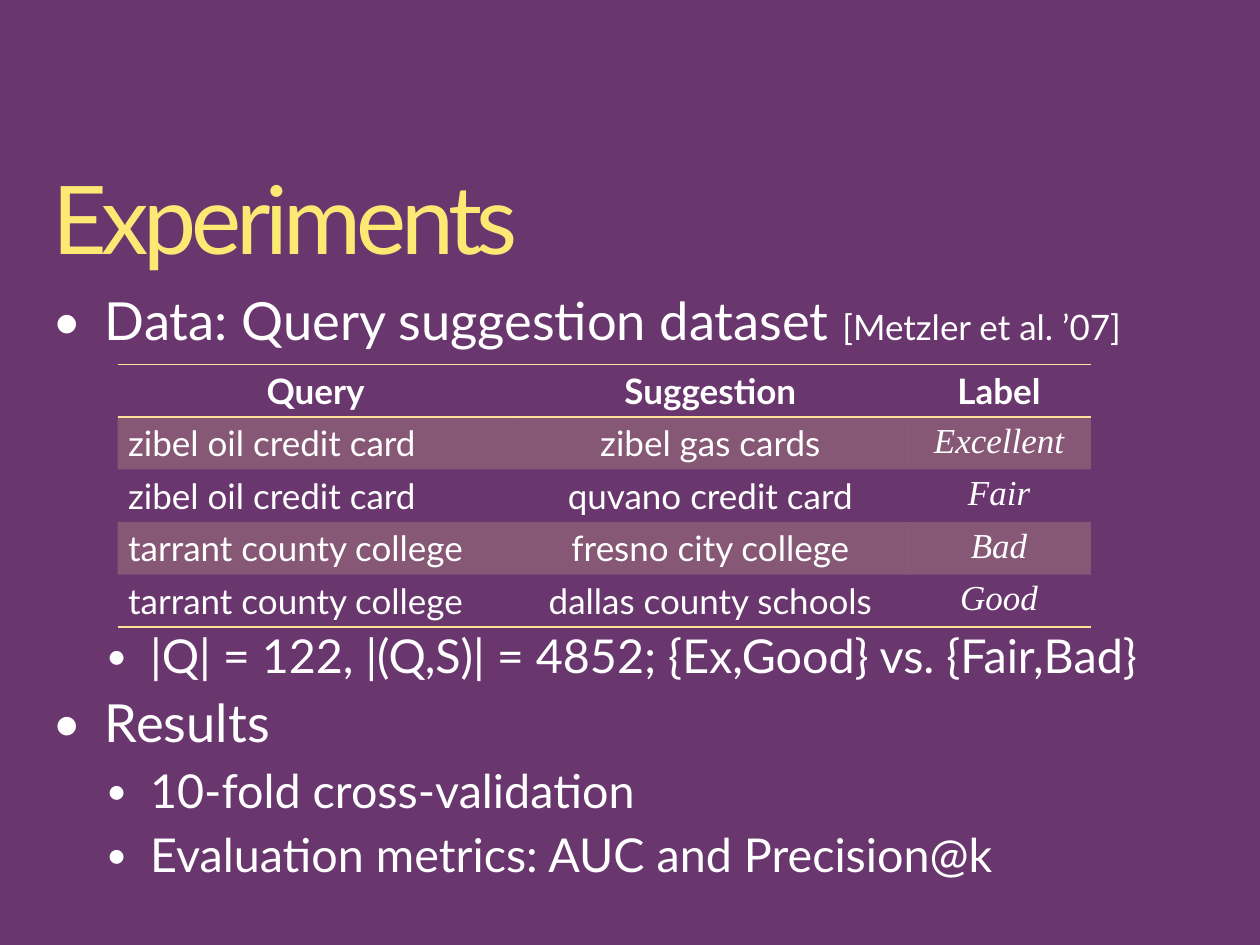
"""Build the Experiments slide: title, data bullet, query table and results."""
from dataclasses import dataclass

from lxml.etree import SubElement
from pptx import Presentation
from pptx.dml.color import RGBColor as Rgb
from pptx.enum.text import PP_ALIGN as Align
from pptx.oxml import parse_xml
from pptx.oxml.ns import nsdecls, qn
from pptx.util import Inches, Pt

COLORS = {"plum": "6A366E", "title": "FCE974", "gold": "FDE399", "white": "FFFFFF"}
PLAIN_TABLE = "{2D5ABB26-0587-4C30-8999-92F81FD0307C}"
SPACING = {"line_spacing": 0.9, "space_before": Pt(9.5)}


@dataclass(frozen=True)
class Span:
    text: str
    size: float
    color: str = "white"
    font: str = "Lato"
    bold: bool = False
    italic: bool = False


@dataclass(frozen=True)
class Level:
    margin: float
    hang: float
    bullet_percent: int


@dataclass(frozen=True)
class Line:
    spans: tuple[Span, ...]
    level: Level | None = None


@dataclass(frozen=True)
class Block:
    top: float
    height: float
    lines: tuple[Line, ...]


TOPIC = Level(0.5, 0.5, 95)
DETAIL = Level(0.93, 0.42, 80)
TITLE = Span("Experiments", 65, "title")
BLOCKS = (
    Block(1.64, 0.98, (Line((TITLE,)),)),
    Block(2.81, 0.6, (
        Line((Span("Data: Query suggestion dataset ", 36),
              Span("[Metzler et al. ’07]", 24)), TOPIC),
    )),
    Block(6.03, 2.66, (
        Line((Span("|Q| = 122, |(Q,S)| = 4852; {Ex,Good} vs. {Fair,Bad}", 32),), DETAIL),
        Line((Span("Results", 36),), TOPIC),
        Line((Span("10-fold cross-validation", 32),), DETAIL),
        Line((Span("Evaluation metrics: AUC and Precision@k", 32),), DETAIL),
    )),
)
COLUMN_WIDTHS = (3.77, 3.75, 1.75)
ROW_HEIGHT = 0.5
QUERIES = (
    ("Query", "Suggestion", "Label"),
    ("zibel oil credit card", "zibel gas cards", "Excellent"),
    ("zibel oil credit card", "quvano credit card", "Fair"),
    ("tarrant county college", "fresno city college", "Bad"),
    ("tarrant county college", "dallas county schools", "Good"),
)


def rgb(name: str) -> Rgb:
    return Rgb.from_string(COLORS[name])


def apply(target, values: dict) -> None:
    for name, value in values.items():
        setattr(target, name, value)


def add_span(paragraph, span: Span):
    run = paragraph.add_run()
    run.text = span.text
    apply(run.font, {"name": span.font, "size": Pt(span.size),
                     "bold": span.bold, "italic": span.italic})
    run.font.color.rgb = rgb(span.color)
    return run


def add_bullet(paragraph, level: Level) -> None:
    properties = paragraph._p.get_or_add_pPr()
    properties.set("marL", str(Inches(level.margin)))
    properties.set("indent", str(-Inches(level.hang)))
    tint = SubElement(properties, qn("a:buClr"))
    SubElement(tint, qn("a:srgbClr"), val=COLORS["white"])
    SubElement(properties, qn("a:buSzPct"), val=str(level.bullet_percent * 1000))
    SubElement(properties, qn("a:buFont"), typeface="Lato")
    SubElement(properties, qn("a:buChar"), char="•")


def add_block(slide, block: Block) -> None:
    box = slide.shapes.add_textbox(Inches(0.5), Inches(block.top),
                                   Inches(11), Inches(block.height))
    frame = box.text_frame
    apply(frame, {"word_wrap": True, "margin_left": 0, "margin_right": 0,
                  "margin_top": 0, "margin_bottom": 0})
    for index, line in enumerate(block.lines):
        paragraph = frame.add_paragraph() if index else frame.paragraphs[0]
        if line.level:
            add_bullet(paragraph, line.level)
        apply(paragraph, SPACING if index else {"line_spacing": 0.9})
        for span in line.spans:
            run = add_span(paragraph, span)
            if span is TITLE:
                run._r.get_or_add_rPr().set("spc", "-360")


def add_rule(cell, edge: str) -> None:
    cell._tc.get_or_add_tcPr().insert(0, parse_xml(
        f'<a:{edge} {nsdecls("a")} w="{Pt(1)}"><a:solidFill>'
        f'<a:srgbClr val="{COLORS["gold"]}"/></a:solidFill></a:{edge}>'))


def shade(cell, banded: bool) -> None:
    if not banded:
        cell.fill.background()
        return
    cell.fill.solid()
    cell.fill.fore_color.rgb = rgb("gold")
    tint = cell._tc.tcPr.find(f'.//{qn("a:srgbClr")}')
    SubElement(tint, qn("a:alpha"), val="20000")


def add_queries(slide) -> None:
    frame = slide.shapes.add_table(
        len(QUERIES), len(COLUMN_WIDTHS), Inches(1.12), Inches(3.47),
        Inches(sum(COLUMN_WIDTHS)), Inches(ROW_HEIGHT * len(QUERIES)))
    table = frame.table
    apply(table, {"first_row": False, "horz_banding": False})
    table._tbl.tblPr.find(qn("a:tableStyleId")).text = PLAIN_TABLE
    for column, width in zip(table.columns, COLUMN_WIDTHS):
        column.width = Inches(width)
    for row, entries in enumerate(QUERIES):
        table.rows[row].height = Inches(ROW_HEIGHT)
        header = row == 0
        for column, entry in enumerate(entries):
            cell = table.cell(row, column)
            label = column == 2 and not header
            paragraph = cell.text_frame.paragraphs[0]
            paragraph.alignment = Align.CENTER if header or column else Align.LEFT
            add_span(paragraph, Span(entry, 24, bold=header, italic=label,
                                     font="Times New Roman" if label else "Lato"))
            shade(cell, row % 2 == 1)
            if header or row == len(QUERIES) - 1:
                add_rule(cell, "lnB")
            if header:
                add_rule(cell, "lnT")


def main() -> None:
    deck = Presentation()
    apply(deck, {"slide_width": Inches(12), "slide_height": Inches(9)})
    slide = deck.slides.add_slide(deck.slide_layouts[6])
    slide.background.fill.solid()
    slide.background.fill.fore_color.rgb = rgb("plum")
    for block in BLOCKS:
        add_block(slide, block)
    add_queries(slide)
    deck.save("out.pptx")


if __name__ == "__main__":
    main()
